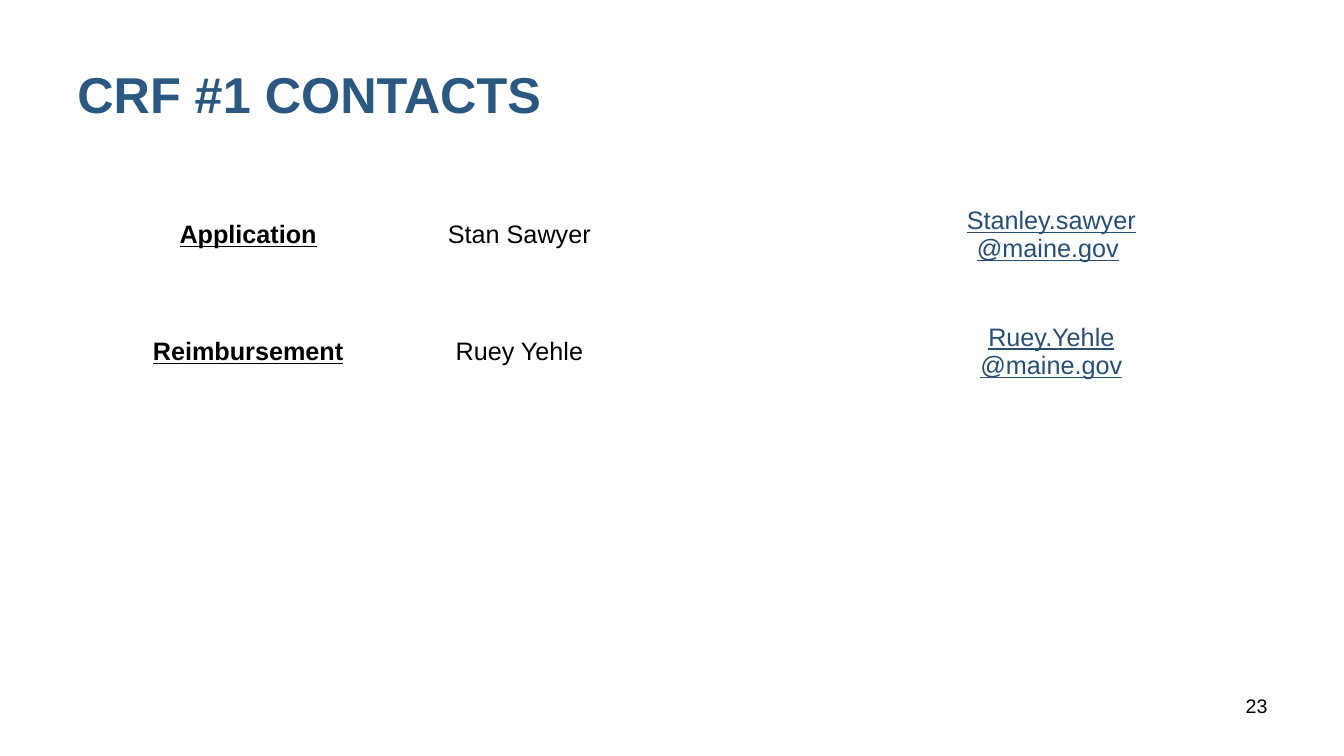
from pptx import Presentation
from pptx.dml.color import RGBColor
from pptx.enum.text import MSO_ANCHOR, PP_ALIGN
from pptx.util import Pt

TITLE = "CRF #1 CONTACTS"
PAGE = "23"
# Role, name, phone, e-mail lines
CONTACTS = [
    ("Application", "Stan Sawyer", "", "Stanley.sawyer\n@maine.gov "),
    ("Reimbursement", "Ruey Yehle", "", "Ruey.Yehle\n@maine.gov"),
]
COLORS = {"title": "2B5880", "text": "000000", "link": "274F73"}
COL_WIDTHS = [186.5, 201, 171.5, 216]
COL_FORMATS = [
    {"bold": True, "underline": True},
    {},
    {},
    {"color": "link", "underline": True},
]
ROW_H = 83.5


def write(tf, text, size=18, color="text", bold=False, underline=False,
          align=PP_ALIGN.CENTER, anchor=MSO_ANCHOR.MIDDLE):
    tf.word_wrap = True
    tf.vertical_anchor = anchor
    p = tf.paragraphs[0]
    p.alignment = align

    def add(part, line):
        r = p.add_run()
        r.text = part
        r.font.name = "Arial"
        r.font.size = Pt(size)
        r.font.bold = bold
        r.font.underline = line
        r.font.color.rgb = RGBColor.from_string(COLORS[color])

    for i, line in enumerate(text.split("\n")):
        if i:
            p.add_line_break()
        add(line.rstrip(), underline)
        if line.endswith(" "):
            add(" ", False)


prs = Presentation()
prs.slide_width, prs.slide_height = Pt(960), Pt(540)
s = prs.slides.add_slide(prs.slide_layouts[5])

# Title
title = s.shapes.title
title.left, title.top, title.width, title.height = Pt(48), Pt(21.6), Pt(864), Pt(90)
write(title.text_frame, TITLE, size=36, color="title", bold=True, align=PP_ALIGN.LEFT)

# Contact table
table = s.shapes.add_table(len(CONTACTS), len(COL_WIDTHS), Pt(84), Pt(126),
                           Pt(sum(COL_WIDTHS)), Pt(ROW_H * len(CONTACTS))).table
table.first_row = table.horz_banding = False
for col, width in zip(table.columns, COL_WIDTHS):
    col.width = Pt(width)
for row, contact in zip(table.rows, CONTACTS):
    row.height = Pt(ROW_H)
    for cell, text, fmt in zip(row.cells, contact, COL_FORMATS):
        cell.fill.background()
        cell.margin_left = cell.margin_right = Pt(10.8)
        cell.margin_top = cell.margin_bottom = Pt(21)
        cell.vertical_anchor = MSO_ANCHOR.MIDDLE
        if text:
            write(cell.text_frame, text, anchor=None, **fmt)

# Page number
box = s.shapes.add_textbox(Pt(688.5), Pt(492), Pt(224), Pt(37.5))
write(box.text_frame, PAGE, size=14, align=PP_ALIGN.RIGHT, anchor=MSO_ANCHOR.TOP)

prs.save("out.pptx")
